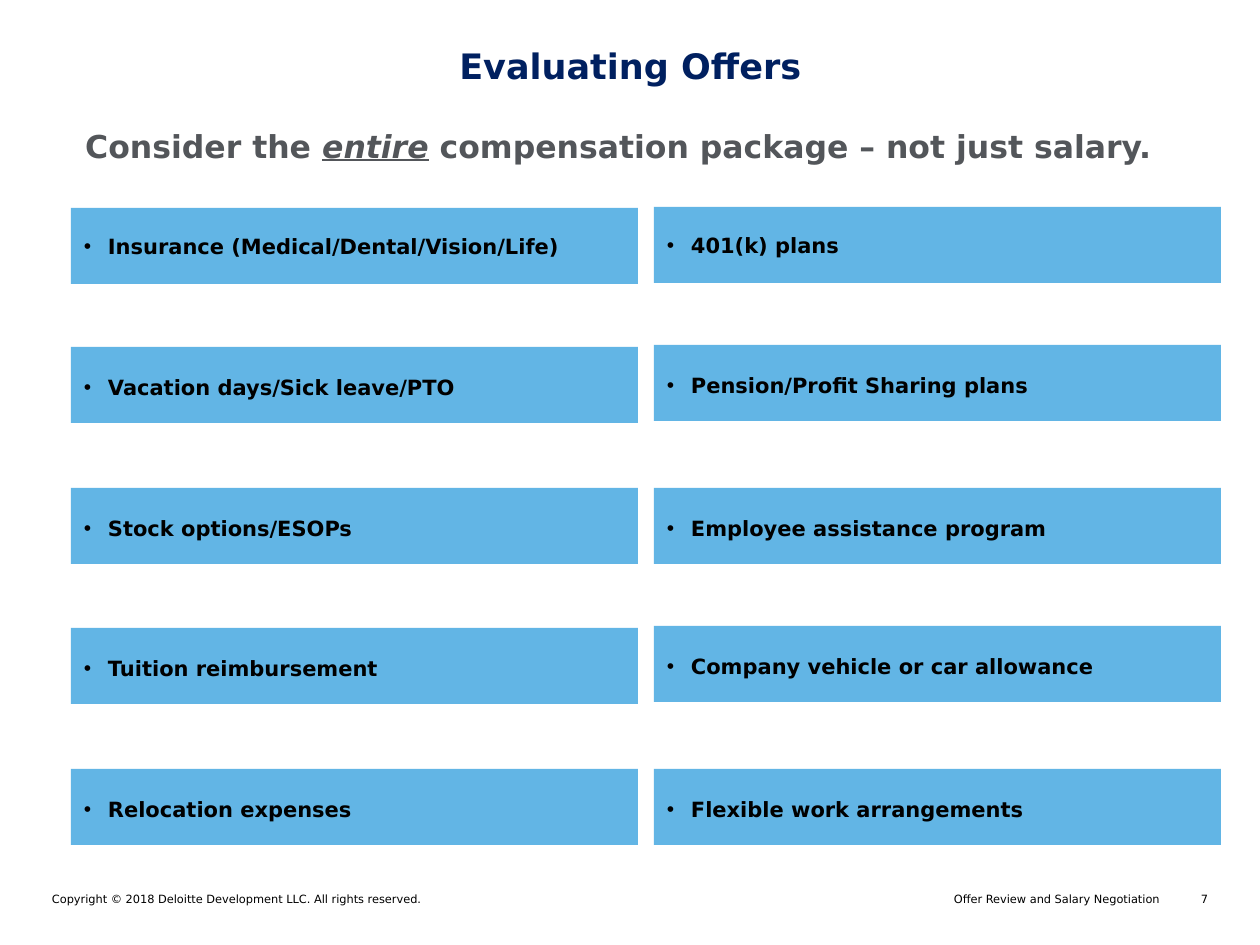
from lxml.etree import SubElement
from pptx import Presentation
from pptx.dml.color import RGBColor
from pptx.enum.shapes import MSO_SHAPE as Shape
from pptx.enum.text import MSO_ANCHOR as Anchor, PP_ALIGN as Align
from pptx.oxml.ns import qn
from pptx.util import Pt

# Content
TITLE = "Evaluating Offers"
MESSAGE = [("Consider the ", False), ("entire", True),
           (" compensation package – not just salary.", False)]
# One column each: left edge, then (top, benefit)
BENEFITS = [
    (71, [(208, "Insurance (Medical/Dental/Vision/Life)"),
          (347, "Vacation days/Sick leave/PTO"),
          (488, "Stock options/ESOPs"),
          (628, "Tuition reimbursement"),
          (769, "Relocation expenses")]),
    (654, [(207, "401(k) plans"),
           (345, "Pension/Profit Sharing plans"),
           (488, "Employee assistance program"),
           (626, "Company vehicle or car allowance"),
           (769, "Flexible work arrangements")]),
]
# Text, left, width, height, alignment
FOOTER = [
    ("Copyright © 2018 Deloitte Development LLC. All rights reserved.", 52, 553, 28, Align.LEFT),
    ("Offer Review and Salary Negotiation", 655, 505, 28, Align.RIGHT),
    ("7", 1177, 31, 14, Align.RIGHT),
]

FONT = "DejaVu Sans"
NAVY, GREY, BLUE, BLACK = "002060", "53565A", "62B5E5", "000000"
BAR_W, BAR_H, BAR_INSET, HANGING = 567, 76, 13, 24
FOOTER_TOP = 892


def px(n):
    return round(n * 914400 / 126)


def colour(value):
    return RGBColor.from_string(value)


def write(shape, text, size, color=BLACK, bold=False, align=Align.LEFT,
          anchor=Anchor.TOP, inset=0, bullet=False, line_spacing=None, space_after=None):
    """Fill a shape with one paragraph; text is a string or (text, emphasised) pairs."""
    frame = shape.text_frame
    frame.word_wrap = True
    frame.vertical_anchor = anchor
    frame.margin_left = frame.margin_right = px(inset)
    frame.margin_top = frame.margin_bottom = px(inset)
    para = frame.paragraphs[0]
    if bullet:
        props = para._p.get_or_add_pPr()
        props.set("marL", str(px(HANGING)))
        props.set("indent", str(-px(HANGING)))
        SubElement(props, qn("a:buFont"), typeface="Arial")
        SubElement(props, qn("a:buChar"), char="•")
    para.alignment = align
    para.line_spacing = line_spacing
    para.space_after = space_after
    for words, emphasised in [(text, False)] if isinstance(text, str) else text:
        run = para.add_run()
        run.text = words
        font = run.font
        font.name, font.size, font.bold = FONT, Pt(size), bold
        font.color.rgb = colour(color)
        if emphasised:
            font.italic = font.underline = True


prs = Presentation()
prs.slide_width, prs.slide_height = px(1260), px(945)
slide = prs.slides.add_slide(prs.slide_layouts[6])


def add_text(left, top, width, height, text, size, **style):
    box = slide.shapes.add_textbox(px(left), px(top), px(width), px(height))
    write(box, text, size, **style)


# Footer
for text, left, width, height, align in FOOTER:
    add_text(left, FOOTER_TOP, width, height, text, 6.5, align=align)

# Title and message
add_text(52, 44, 1157, 47, TITLE, 20, color=NAVY, bold=True, align=Align.CENTER)
add_text(40, 127, 1157, 59, MESSAGE, 18, color=GREY, bold=True,
         align=Align.CENTER, space_after=Pt(10))

# Benefit bars; the first row is single spaced
for left, column in BENEFITS:
    for row, (top, benefit) in enumerate(column):
        bar = slide.shapes.add_shape(Shape.RECTANGLE, px(left), px(top), px(BAR_W), px(BAR_H))
        bar.shadow.inherit = False
        bar.fill.solid()
        bar.fill.fore_color.rgb = colour(BLUE)
        bar.line.fill.background()
        write(bar, benefit, 12, bold=True, anchor=Anchor.MIDDLE, inset=BAR_INSET,
              bullet=True, line_spacing=1.15 if row else None)

prs.save("out.pptx")
